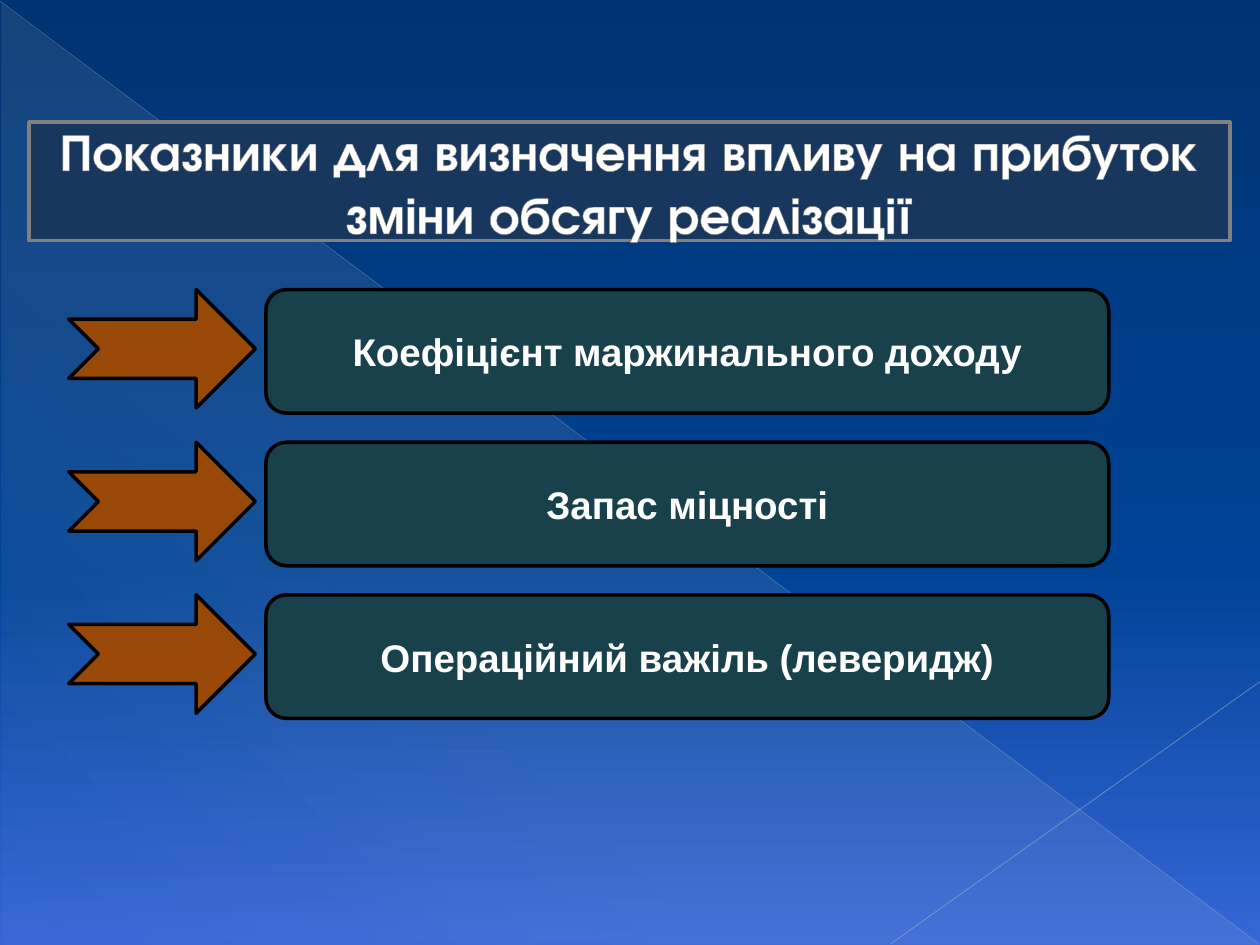
from dataclasses import dataclass

from lxml import etree
from pptx import Presentation
from pptx.dml.color import RGBColor
from pptx.enum.shapes import MSO_CONNECTOR, MSO_SHAPE
from pptx.enum.text import MSO_ANCHOR, MSO_AUTO_SIZE, PP_ALIGN
from pptx.oxml.ns import qn
from pptx.util import Pt

STRAIGHT = MSO_CONNECTOR.STRAIGHT
TRIANGLE = MSO_SHAPE.RIGHT_TRIANGLE
ARROW = MSO_SHAPE.NOTCHED_RIGHT_ARROW
ROUNDED = MSO_SHAPE.ROUNDED_RECTANGLE
MIDDLE = MSO_ANCHOR.MIDDLE
NO_AUTOFIT = MSO_AUTO_SIZE.NONE
CENTER = PP_ALIGN.CENTER


@dataclass(frozen=True)
class Theme:
    backdrop: tuple = ((0, "003371", 100), (60, "004396", 100), (100, "3566D7", 100))
    sheen: tuple = ((0, "EEECE1", 10), (70, "EEECE1", 8), (100, "EEECE1", 1))
    title_fill: str = "17375E"
    title_border: str = "808080"
    title_outline: str = "7D7D7D"
    arrow_fill: str = "984807"
    card_fill: str = "18414C"
    border: str = "000000"
    text: str = "FFFFFF"
    falling_line: str = "ADB6CE"
    rising_line: str = "B6BED3"
    title_font: str = "TeX Gyre Adventor"
    card_font: str = "Arial"
    title_size: float = 30
    card_size: float = 22
    border_width: float = 2
    outline_width: float = 0.83


class SlideBuilder:
    def __init__(self, slide, theme):
        self.slide = slide
        self.theme = theme

    def add_color(self, parent, color, opacity):
        srgb = etree.SubElement(parent, qn("a:srgbClr"), val=color)
        if opacity < 100:
            etree.SubElement(srgb, qn("a:alpha"), val=str(opacity * 1000))

    def gradient(self, fill, owner, stops, angle):
        fill.gradient()
        grad = next(owner.iter(qn("a:gradFill")))
        stop_list = grad.find(qn("a:gsLst"))
        for old_stop in list(stop_list):
            stop_list.remove(old_stop)
        for position, color, opacity in stops:
            stop = etree.SubElement(stop_list, qn("a:gs"), pos=str(position * 1000))
            self.add_color(stop, color, opacity)
        grad.find(qn("a:lin")).set("ang", str(angle * 60000))

    def background(self):
        self.gradient(self.slide.background.fill, self.slide.element, self.theme.backdrop, 90)

    def sheen(self, left, top, width, height):
        triangle = self.slide.shapes.add_shape(TRIANGLE, Pt(left), Pt(top), Pt(width), Pt(height))
        triangle.shadow.inherit = False
        self.gradient(triangle.fill, triangle.element.spPr, self.theme.sheen, 133)
        triangle.line.fill.background()

    def hairline(self, start, end, color, width, opacity):
        hairline = self.slide.shapes.add_connector(
            STRAIGHT, *(Pt(value) for value in (*start, *end)))
        hairline.line.width = Pt(width)
        hairline.line.color.rgb = RGBColor.from_string(color)
        properties = hairline.element.spPr
        srgb = next(properties.iter(qn("a:srgbClr")))
        etree.SubElement(srgb, qn("a:alpha"), val=str(opacity * 1000))
        etree.SubElement(properties, qn("a:effectLst"))

    def paint(self, shape, fill, border):
        shape.fill.solid()
        shape.fill.fore_color.rgb = RGBColor.from_string(fill)
        shape.line.color.rgb = RGBColor.from_string(border)
        shape.line.width = Pt(self.theme.border_width)

    def set_text(self, shape, text, font_name, size):
        frame = shape.text_frame
        frame.text = text
        frame.word_wrap = True
        frame.auto_size = NO_AUTOFIT
        frame.vertical_anchor = MIDDLE
        paragraph = frame.paragraphs[0]
        paragraph.alignment = CENTER
        font = paragraph.font
        font.name = font_name
        font.size = Pt(size)
        font.bold = True
        font.color.rgb = RGBColor.from_string(self.theme.text)

    def title(self, text, left, top, width, height):
        theme = self.theme
        title = self.slide.shapes.title
        title.left, title.top = Pt(left), Pt(top)
        title.width, title.height = Pt(width), Pt(height)
        self.slide.shapes.element.append(title.element)
        self.paint(title, theme.title_fill, theme.title_border)
        self.set_text(title, text, theme.title_font, theme.title_size)
        run = next(title.element.iter(qn("a:r")))
        outline = etree.Element(qn("a:ln"), w=str(Pt(theme.outline_width)))
        self.add_color(etree.SubElement(outline, qn("a:solidFill")), theme.title_outline, 100)
        run.get_or_add_rPr().insert(0, outline)

    def arrow(self, left, top, width, height):
        arrow = self.slide.shapes.add_shape(ARROW, Pt(left), Pt(top), Pt(width), Pt(height))
        arrow.shadow.inherit = False
        self.paint(arrow, self.theme.arrow_fill, self.theme.border)

    def card(self, text, left, top, width, height):
        card = self.slide.shapes.add_shape(ROUNDED, Pt(left), Pt(top), Pt(width), Pt(height))
        card.shadow.inherit = False
        self.paint(card, self.theme.card_fill, self.theme.border)
        self.set_text(card, text, self.theme.card_font, self.theme.card_size)


def main():
    presentation = Presentation()
    presentation.slide_width, presentation.slide_height = Pt(720), Pt(540)
    theme = Theme()
    slide = presentation.slides.add_slide(presentation.slide_layouts[5])
    builder = SlideBuilder(slide, theme)

    builder.background()
    builder.sheen(0.7, 1.4, 719.3, 538.6)
    builder.hairline((0, 0.7), (719.3, 539.3), theme.falling_line, 0.39, 35)
    builder.hairline((720, 389.5), (509, 539.3), theme.rising_line, 0.47, 45)
    builder.title("Показники для визначення впливу на прибуток зміни обсягу реалізації",
                  16.6, 69.8, 686.2, 67.7)

    indicators = (
        "Коефіцієнт маржинального доходу",
        "Запас міцності",
        "Операційний важіль (леверидж)",
    )
    first_top, pitch = 165.5, 87.2
    for row, indicator in enumerate(indicators):
        top = first_top + row * pitch
        builder.arrow(39.3, top, 106.6, 67.7)
        builder.card(indicator, 151.9, top, 481.7, 70.6)

    presentation.save("out.pptx")


if __name__ == "__main__":
    main()
